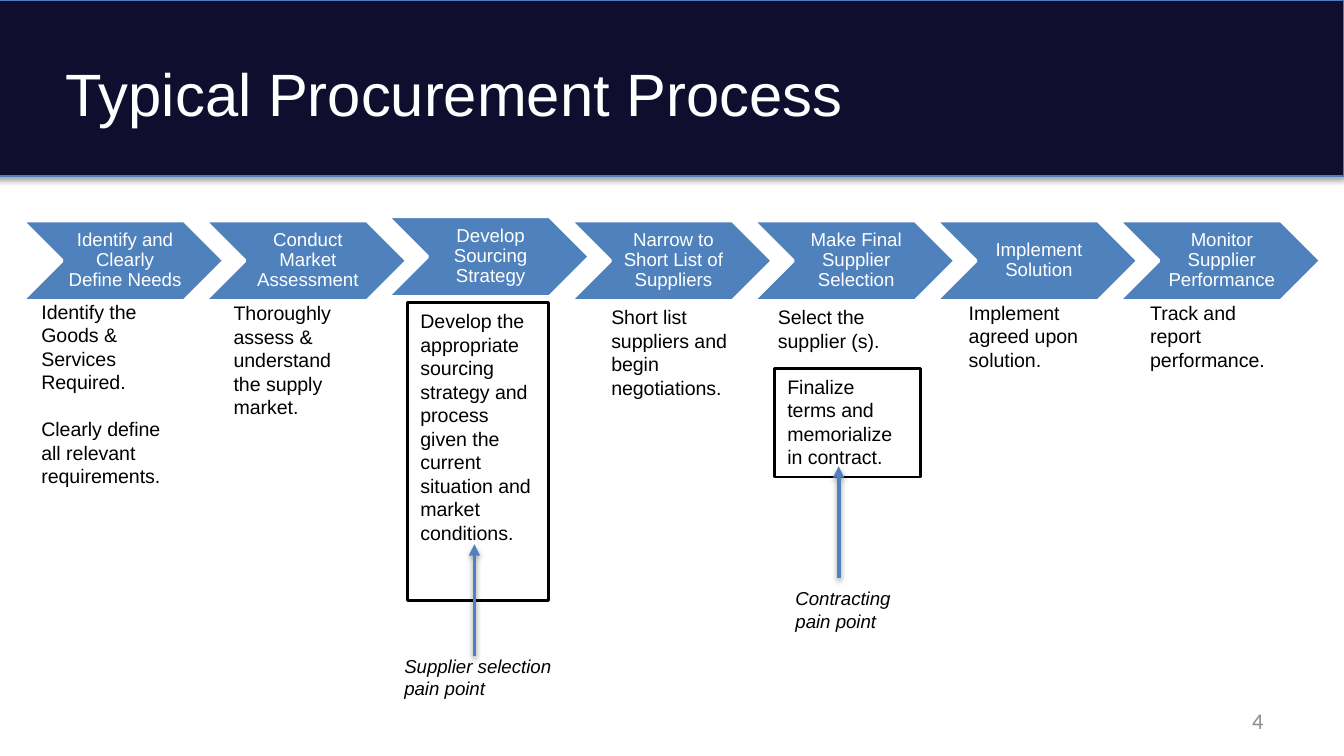
"""Build the procurement process slide: seven chevron steps with notes and pain points."""
import pptx
import pptx.util
import pptx.dml.color
import pptx.enum.shapes
import pptx.enum.text
import pptx.oxml
import pptx.oxml.ns

Inches = pptx.util.Inches
Pt = pptx.util.Pt
MSO = pptx.enum.shapes.MSO_SHAPE
ALIGN = pptx.enum.text.PP_ALIGN
ANCHOR = pptx.enum.text.MSO_ANCHOR

TITLE = "Typical Procurement Process"
PAGE = "4"
STEPS = [
    ("Identify and Clearly Define Needs", 1.64),
    ("Conduct Market Assessment", 1.64),
    ("Develop Sourcing Strategy", 1.61),
    ("Narrow to Short List of Suppliers", 1.64),
    ("Make Final Supplier Selection", 1.64),
    ("Implement Solution", 1.64),
    ("Monitor Supplier Performance", 1.64),
]
NOTES = [
    (["Identify the Goods & Services Required.", "Clearly define all relevant requirements."],
     (0.21, 2.18, 1.1, 1.51)),
    (["Thoroughly assess & understand the supply market."], (1.64, 2.19, 1.1, 0.98)),
    (["Short list suppliers and begin negotiations."], (4.45, 2.22, 1.1, 0.81)),
    (["Select the supplier (s)."], (5.69, 2.22, 1.1, 0.63)),
    (["Implement agreed upon solution."], (7.11, 2.19, 1.1, 0.63)),
    (["Track and report performance."], (8.46, 2.19, 1.1, 0.63)),
]
FRAMED_NOTES = [
    ("Develop the appropriate sourcing strategy and process given the current situation "
     "and market conditions.", (3.03, 2.25, 1.05, 2.22)),
    ("Finalize terms and memorialize in contract.", (5.76, 2.74, 1.09, 0.81)),
]
PAIN_POINTS = [
    (["Supplier selection pain point"], (2.91, 4.82, 1.35, 0.44), (3.53, 4.88)),
    (["Contracting", "pain point"], (5.82, 4.32, 1.35, 0.44), (6.24, 4.3)),
]
STEP_LEFT, STEP_PITCH, STEP_W, STEP_H = 0.16, 1.36, 1.51, 0.6
ARROW_LENGTH = 0.83
THEME = dict(
    font="Arial", page_font="Calibri", navy="100E2F", band_line="4B7EBC", blue="4F81BD",
    white="FFFFFF", black="000000", gray="8C8C8C",
    title=32, step=10, note=10.5, pain=10, page=12,
)


def rgb(name):
    """Return a theme colour."""
    return pptx.dml.color.RGBColor.from_string(THEME[name])


def write(s, lines, size="note", color="black", font="font", italic=False, align=ALIGN.LEFT,
          anchor=ANCHOR.TOP, insets=(0.1, 0.05, 0.1, 0.05), spacing=None, gap=0):
    """Fill a shape with formatted paragraphs."""
    tf = s.text_frame
    tf.word_wrap = True
    tf.vertical_anchor = anchor
    tf.margin_left, tf.margin_top, tf.margin_right, tf.margin_bottom = map(Inches, insets)
    for i, line in enumerate(lines):
        p = tf.paragraphs[0] if i == 0 else tf.add_paragraph()
        p.alignment = align
        p.line_spacing = spacing
        p.space_before = Pt(gap if i else 0)
        r = p.add_run()
        r.text = line
        r.font.name, r.font.size = THEME[font], Pt(THEME[size])
        r.font.italic = italic
        r.font.color.rgb = rgb(color)


def add_text(slide, box, lines, **fmt):
    """Add a text box."""
    write(slide.shapes.add_textbox(*map(Inches, box)), lines, **fmt)


def add_box(slide, kind, box, line, width, fill=None):
    """Add a preset shape with an outline and optional fill."""
    s = slide.shapes.add_shape(kind, *map(Inches, box))
    s.shadow.inherit = False
    if fill:
        s.fill.solid()
        s.fill.fore_color.rgb = rgb(fill)
    else:
        s.fill.background()
    s.line.color.rgb = rgb(line)
    s.line.width = Pt(width)
    return s


def add_shadow(s, alpha, distance):
    """Give a shape or connector a soft shadow straight below."""
    pr = s._element.spPr
    for old in pr.findall(pptx.oxml.ns.qn("a:effectLst")):
        pr.remove(old)
    pr.append(pptx.oxml.parse_xml(
        f'<a:effectLst {pptx.oxml.ns.nsdecls("a")}><a:outerShdw blurRad="{Pt(3.1)}" '
        f'dist="{Pt(distance)}" dir="5400000" rotWithShape="0"><a:srgbClr val="{THEME["black"]}">'
        f'<a:alpha val="{alpha * 1000}"/></a:srgbClr></a:outerShdw></a:effectLst>'))


def add_up_arrow(slide, x, y):
    """Add a vertical arrow that starts at x, y and points up."""
    s = slide.shapes.add_connector(
        pptx.enum.shapes.MSO_CONNECTOR.STRAIGHT,
        *map(Inches, (x, y, x, y - ARROW_LENGTH)))
    s.line.color.rgb = rgb("blue")
    s.line.width = Pt(2)
    s.line._get_or_add_ln().append(pptx.oxml.parse_xml(
        f'<a:tailEnd {pptx.oxml.ns.nsdecls("a")} type="triangle"/>'))
    add_shadow(s, 38, 1.6)


def main():
    """Build and save the slide."""
    prs = pptx.Presentation()
    prs.slide_width, prs.slide_height = Inches(10), Inches(10 * 9 / 16)
    slide = prs.slides.add_slide(prs.slide_layouts[6])

    band = add_box(slide, MSO.RECTANGLE, (-0.04, 0, 10.04, 1.31), "band_line", 0.75, "navy")
    add_shadow(band, 35, 1.8)
    add_text(slide, (7.17, 5.21, 2.33, 0.3), [PAGE], size="page", color="gray",
             font="page_font", align=ALIGN.RIGHT, anchor=ANCHOR.MIDDLE)

    for i, (label, top) in enumerate(STEPS):
        box = (STEP_LEFT + i * STEP_PITCH, top, STEP_W, STEP_H)
        s = add_box(slide, MSO.CHEVRON, box, "white", 2, "blue")
        write(s, [label], size="step", color="white", align=ALIGN.CENTER, anchor=ANCHOR.MIDDLE,
              insets=(0.04, 0.01, 0.01, 0.01), spacing=0.9)

    for lines, box in NOTES:
        add_text(slide, box, lines, gap=12.6)
    for text, box in FRAMED_NOTES:
        write(add_box(slide, MSO.RECTANGLE, box, "black", 1.5), [text])

    add_text(slide, (0.39, 0.37, 8.47, 0.64), [TITLE], size="title", color="white")

    for lines, box, start in PAIN_POINTS:
        add_up_arrow(slide, *start)
        add_text(slide, box, lines, size="pain", italic=True)

    prs.save("out.pptx")


if __name__ == "__main__":
    main()
